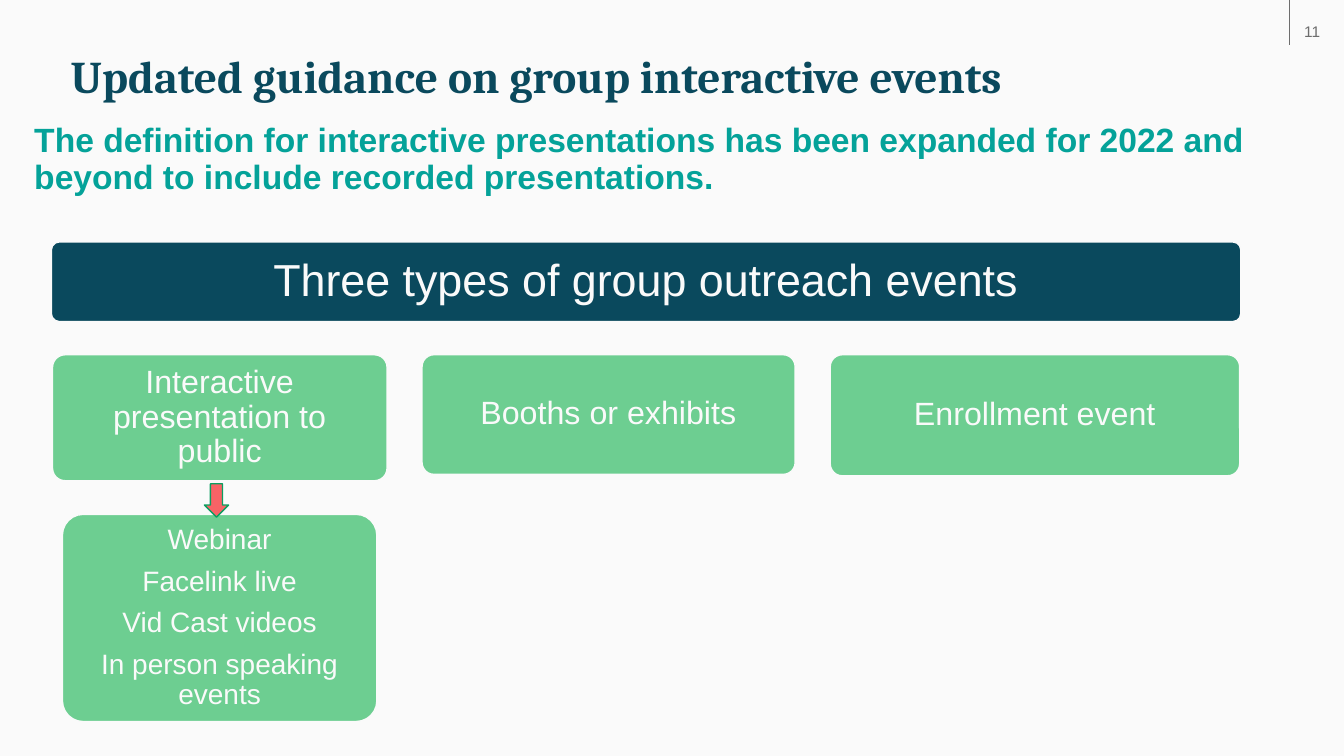
from lxml import etree
from pptx import Presentation
from pptx.dml.color import RGBColor
from pptx.enum.shapes import MSO_CONNECTOR, MSO_SHAPE
from pptx.enum.text import MSO_ANCHOR, PP_ALIGN
from pptx.oxml.ns import qn
from pptx.util import Pt

PAPER, NAVY, TEAL, GREEN = "FAFAFA", "0A495D", "04A299", "6DCE91"
GRAY, CORAL, ARROW_EDGE = "6D6D6D", "F76366", "0A9F60"


def color(value):
    return RGBColor.from_string(value)


def write(shape, lines, size, text_color, font="Arial", bold=False,
          align=PP_ALIGN.LEFT, anchor=MSO_ANCHOR.TOP, inset=0, gap=0):
    """Fill a shape with one paragraph per line, separated by gap points."""
    frame = shape.text_frame
    frame.word_wrap = True
    frame.vertical_anchor = anchor
    frame.margin_left = frame.margin_right = Pt(inset)
    frame.margin_top = frame.margin_bottom = Pt(inset)
    frame.text = "\n".join(lines)
    for index, paragraph in enumerate(frame.paragraphs):
        paragraph.alignment = align
        paragraph.line_spacing = 0.9
        paragraph.space_before = Pt(gap if index else 0)
        paragraph.font.name = font
        paragraph.font.size = Pt(size)
        paragraph.font.bold = bold
        paragraph.font.color.rgb = color(text_color)


def add_text(slide, left, top, width, height, text, size, text_color, **style):
    box = slide.shapes.add_textbox(Pt(left), Pt(top), Pt(width), Pt(height))
    write(box, [text], size, text_color, **style)


def add_filled(slide, kind, left, top, width, height, fill, edge):
    shape = slide.shapes.add_shape(kind, Pt(left), Pt(top), Pt(width), Pt(height))
    shape.shadow.inherit = False
    shape.fill.solid()
    shape.fill.fore_color.rgb = color(fill)
    shape.line.color.rgb = color(edge)
    shape.line.width = Pt(1)
    return shape


def add_card(slide, left, top, width, height, fill, lines, size, inset=10):
    card = add_filled(slide, MSO_SHAPE.ROUNDED_RECTANGLE,
                      left, top, width, height, fill, PAPER)
    card.adjustments[0] = 0.1
    write(card, lines, size, PAPER, align=PP_ALIGN.CENTER,
          anchor=MSO_ANCHOR.MIDDLE, inset=inset, gap=8)


def add_vertical_line(slide, x, top, bottom, line_color):
    line = slide.shapes.add_connector(MSO_CONNECTOR.STRAIGHT,
                                      Pt(x), Pt(top), Pt(x), Pt(bottom))
    line.line.color.rgb = color(line_color)
    line.line.width = Pt(0.5)
    etree.SubElement(line._element.spPr, qn("a:effectLst"))


def main():
    presentation = Presentation()
    presentation.slide_width = Pt(960)
    presentation.slide_height = Pt(540)
    slide = presentation.slides.add_slide(presentation.slide_layouts[6])
    slide.background.fill.solid()
    slide.background.fill.fore_color.rgb = color(PAPER)

    add_text(slide, 921, 17.5, 32.5, 19.5, "11", 11, GRAY, align=PP_ALIGN.CENTER)
    add_vertical_line(slide, 921, 0, 32.5, GRAY)
    add_text(slide, 50.5, 24.5, 819.5, 64, "Updated guidance on group interactive events",
             32.4, NAVY, font="Cambria", bold=True, anchor=MSO_ANCHOR.MIDDLE)
    add_text(slide, 24.5, 88.5, 870, 72,
             "The definition for interactive presentations has been expanded "
             "for 2022 and beyond to include recorded presentations.",
             24, TEAL, bold=True)

    add_card(slide, 36.7, 172.8, 849.6, 56.9, NAVY,
             ["Three types of group outreach events"], 32)

    left, column_gap = 37.5, 25
    event_types = [("Interactive presentation to public", 239, 90),
                   ("Booths or exhibits", 266.5, 85.5),
                   ("Enrollment event", 292.5, 86.5)]
    for label, width, height in event_types:
        add_card(slide, left, 253.4, width, height, GREEN, [label], 23)
        left += width + column_gap

    add_card(slide, 44.6, 367.4, 224.6, 148, GREEN,
             ["Webinar", "Facelink live", "Vid Cast videos", "In person speaking events"],
             20, inset=8)
    add_filled(slide, MSO_SHAPE.DOWN_ARROW, 146, 345.6, 17.3, 23.8, CORAL, ARROW_EDGE)

    presentation.save("out.pptx")


if __name__ == "__main__":
    main()
